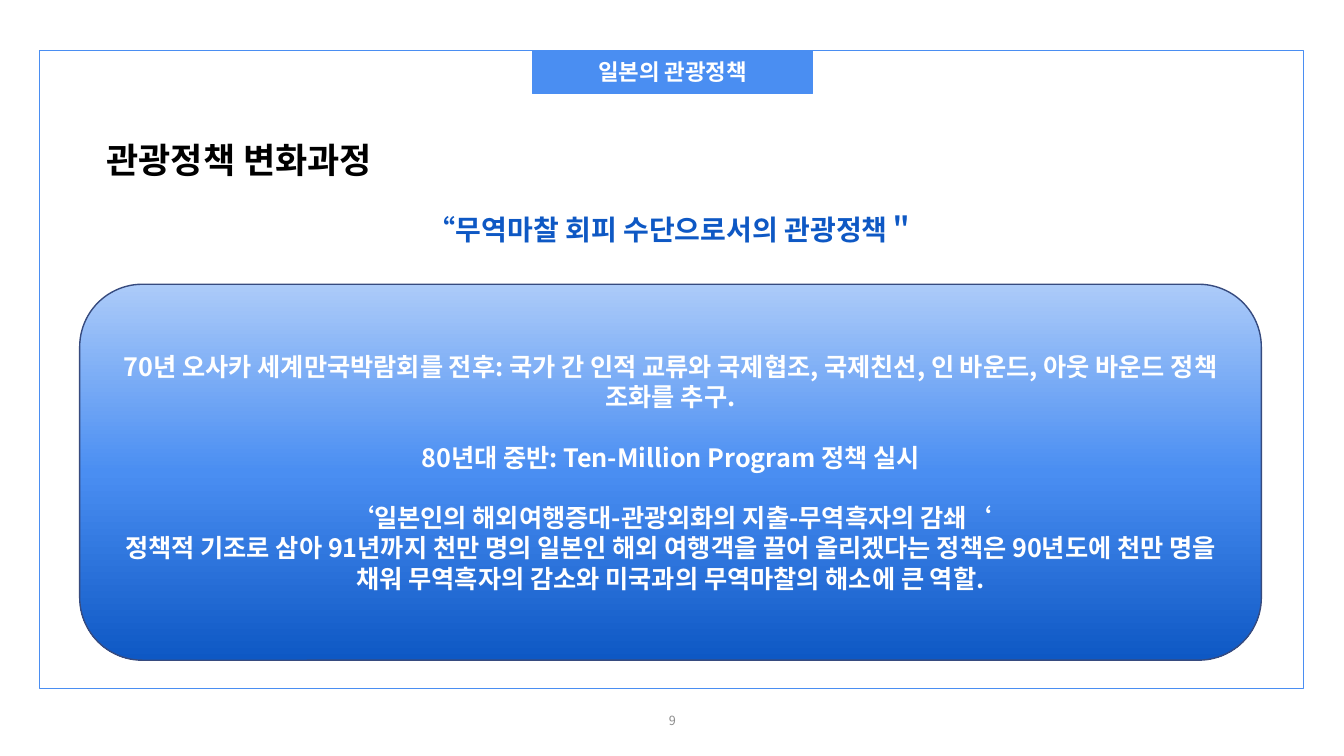
from copy import deepcopy
from dataclasses import dataclass

from lxml import etree
from pptx import Presentation
from pptx.dml.color import RGBColor
from pptx.enum.shapes import MSO_SHAPE
from pptx.enum.text import MSO_ANCHOR, MSO_AUTO_SIZE, PP_ALIGN
from pptx.oxml.ns import qn
from pptx.util import Inches, Pt

RECTANGLE, ROUNDED = MSO_SHAPE.RECTANGLE, MSO_SHAPE.ROUNDED_RECTANGLE
CENTER, JUSTIFY = PP_ALIGN.CENTER, PP_ALIGN.JUSTIFY
TOP, MIDDLE = MSO_ANCHOR.TOP, MSO_ANCHOR.MIDDLE
FIT_SHAPE = MSO_AUTO_SIZE.SHAPE_TO_FIT_TEXT

SLIDE_WIDTH, SLIDE_HEIGHT = Inches(13.33), Inches(7.5)
COLUMNS, ROWS = 133.3, 75  # grid cells of a tenth of an inch


@dataclass(frozen=True)
class Theme:
    font: str = "Noto Sans CJK KR"
    white: str = "FFFFFF"
    black: str = "000000"
    grey: str = "8C8C8C"
    pale_blue: str = "ACCBF9"
    blue: str = "4A8EF2"
    deep_blue: str = "0E58C4"
    panel_edge: str = "374B7F"
    heading_size: int = 25
    quote_size: int = 20
    body_size: int = 18
    tab_size: int = 16
    number_size: int = 9
    line_width: int = 1
    section_gap: float = 21.6


THEME = Theme()

# Each entry: text, space before it in points
POLICY_HISTORY = [
    ("70년 오사카 세계만국박람회를 전후: 국가 간 인적 교류와 국제협조, "
     "국제친선, 인 바운드, 아웃 바운드 정책 조화를 추구.", 0),
    ("80년대 중반: Ten-Million Program 정책 실시", THEME.section_gap),
    ("‘일본인의 해외여행증대-관광외화의 지출-무역흑자의 감쇄‘", THEME.section_gap),
    ("정책적 기조로 삼아 91년까지 천만 명의 일본인 해외 여행객을 끌어 올리겠다는 "
     "정책은 90년도에 천만 명을 채워 무역흑자의 감소와 미국과의 무역마찰의 "
     "해소에 큰 역할.", 0),
]


def grid_box(column, row, width, height):
    return (round(SLIDE_WIDTH * column / COLUMNS), round(SLIDE_HEIGHT * row / ROWS),
            round(SLIDE_WIDTH * width / COLUMNS), round(SLIDE_HEIGHT * height / ROWS))


def set_attributes(target, formats):
    for attribute, value in formats.items():
        setattr(target, attribute, value)


def write_text(holder, paragraphs, size, color, bold=True, align=CENTER, anchor=MIDDLE):
    """Fill a shape with (text, space before) paragraphs in one style."""
    frame = holder.text_frame
    set_attributes(frame, {"word_wrap": True, "vertical_anchor": anchor})
    for index, (text, gap) in enumerate(paragraphs):
        paragraph = frame.add_paragraph() if index else frame.paragraphs[0]
        set_attributes(paragraph, {"alignment": align, "space_before": Pt(gap)})
        run = paragraph.add_run()
        run.text = text
        set_attributes(run.font, {"name": THEME.font, "size": Pt(size), "bold": bold})
        run.font.color.rgb = RGBColor.from_string(color)
        east_asian = etree.SubElement(run.font._element, qn("a:ea"))
        east_asian.set("typeface", THEME.font)


def add_label(slide, box, text, size, color, **style):
    label = slide.shapes.add_textbox(*grid_box(*box))
    write_text(label, [(text, 0)], size, color, **style)
    return label


def add_outlined_shape(slide, kind, box, edge, fill=None):
    shape = slide.shapes.add_shape(kind, *grid_box(*box))
    shape.shadow.inherit = False
    shape.line.color.rgb = RGBColor.from_string(edge)
    shape.line.width = Pt(THEME.line_width)
    if fill:
        shape.fill.solid()
        shape.fill.fore_color.rgb = RGBColor.from_string(fill)
    else:
        shape.fill.background()
    return shape


def shade_downward(shape, colors):
    """Spread the colours evenly from top to bottom."""
    shape.fill.gradient()
    shape.fill.gradient_angle = 270
    stop_list = shape._element.spPr.find(qn("a:gradFill")).find(qn("a:gsLst"))
    while len(stop_list) < len(colors):
        stop_list.append(deepcopy(stop_list[0]))
    for index, (stop, color) in enumerate(zip(shape.fill.gradient_stops, colors)):
        stop.position = index / (len(colors) - 1)
        stop.color.rgb = RGBColor.from_string(color)


def main():
    presentation = Presentation()
    set_attributes(presentation, {"slide_width": SLIDE_WIDTH, "slide_height": SLIDE_HEIGHT})
    slide = presentation.slides.add_slide(presentation.slide_layouts[6])

    add_label(slide, (51.7, 69.5, 30, 4), "9", THEME.number_size, THEME.grey, bold=False)
    topic_tab = add_outlined_shape(slide, RECTANGLE, (52.8, 5, 27.8, 4.3),
                                   THEME.blue, THEME.blue)
    write_text(topic_tab, [("일본의 관광정책", 0)], THEME.tab_size, THEME.white)
    add_outlined_shape(slide, RECTANGLE, (3.9, 5, 125.4, 63.3), THEME.blue)

    quote = add_label(slide, (6, 20.6, 121.3, 4.4), "“무역마찰 회피 수단으로서의 관광정책＂",
                      THEME.quote_size, THEME.deep_blue, anchor=TOP)
    heading = add_label(slide, (9.6, 13.2, 117.1, 5.2), "관광정책 변화과정",
                        THEME.heading_size, THEME.black, align=JUSTIFY, anchor=TOP)
    for label in (quote, heading):
        label.text_frame.auto_size = FIT_SHAPE

    history_panel = add_outlined_shape(slide, ROUNDED, (7.9, 28.2, 117.2, 37.3),
                                       THEME.panel_edge)
    shade_downward(history_panel, (THEME.pale_blue, THEME.blue, THEME.deep_blue))
    write_text(history_panel, POLICY_HISTORY, THEME.body_size, THEME.white)

    presentation.save("out.pptx")


if __name__ == "__main__":
    main()
